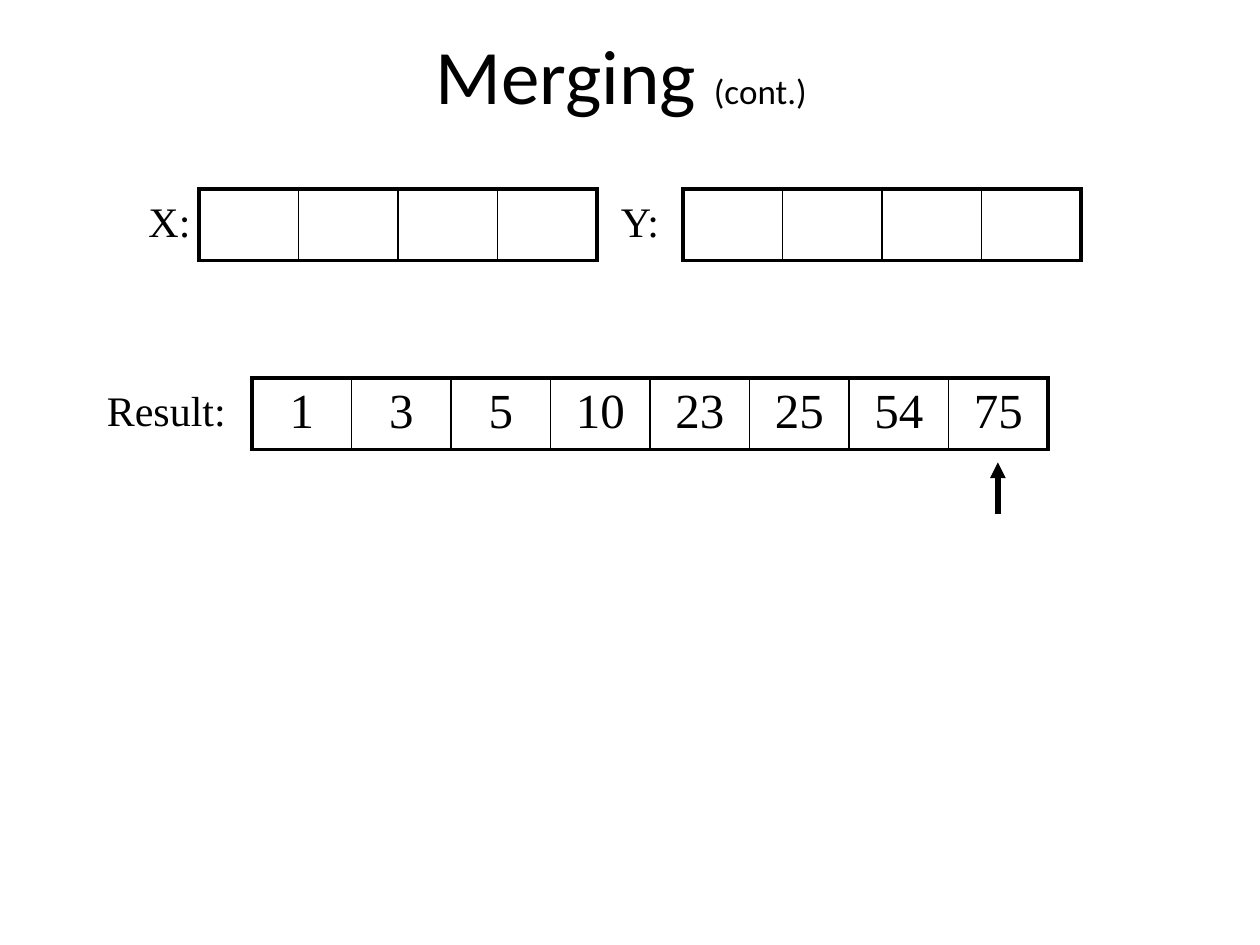
from dataclasses import dataclass

from lxml.etree import SubElement
from pptx import Presentation
from pptx.dml.color import RGBColor
from pptx.enum.shapes import MSO_CONNECTOR as Conn
from pptx.enum.text import MSO_ANCHOR as Anchor, PP_ALIGN as Align
from pptx.oxml.ns import qn
from pptx.util import Inches, Pt

BLACK = "000000"
SERIF = "Times New Roman"
CELL_W, CELL_H = 0.79, 0.57
THICK, THIN = 2.25, 1


@dataclass
class ArrayRow:
    label: str
    label_left: float
    label_width: float
    left: float
    top: float
    values: tuple[str, ...]


ARRAYS = [
    ArrayRow("X:", 1.08, 0.58, 1.58, 1.5, ("",) * 4),
    ArrayRow("Y:", 4.83, 0.58, 5.42, 1.5, ("",) * 4),
    ArrayRow("Result:", 0.75, 1.17, 2, 3,
             ("1", "3", "5", "10", "23", "25", "54", "75")),
]


def rgb(color: str) -> RGBColor:
    return RGBColor.from_string(color)


def add_run(p, text: str, size: float, font: str) -> None:
    r = p.add_run()
    r.text = text
    for name, value in {"size": Pt(size), "name": font}.items():
        setattr(r.font, name, value)
    r.font.color.rgb = rgb(BLACK)


def set_borders(cell, first: bool, last: bool) -> None:
    widths = {
        "a:lnL": THICK if first else THIN,
        "a:lnR": THICK if last else THIN,
        "a:lnT": THICK,
        "a:lnB": THICK,
    }
    tc_pr = cell._tc.get_or_add_tcPr()
    for tag, width in widths.items():
        ln = SubElement(tc_pr, qn(tag), w=str(Pt(width)))
        fill = SubElement(ln, qn("a:solidFill"))
        SubElement(fill, qn("a:srgbClr"), val=BLACK)


def add_array(s, row: ArrayRow) -> None:
    count = len(row.values)
    table = s.shapes.add_table(
        1, count, Inches(row.left), Inches(row.top),
        Inches(CELL_W * count), Inches(CELL_H)).table
    for name in ("first_row", "horz_banding"):
        setattr(table, name, False)
    for i, value in enumerate(row.values):
        table.columns[i].width = Inches(CELL_W)
        cell = table.cell(0, i)
        set_borders(cell, i == 0, i == count - 1)
        cell.fill.background()
        if value:
            p = cell.text_frame.paragraphs[0]
            p.alignment = Align.CENTER
            add_run(p, value, 28, SERIF)


def add_label(s, row: ArrayRow) -> None:
    box = s.shapes.add_textbox(Inches(row.label_left), Inches(row.top),
                               Inches(row.label_width), Inches(0.5))
    tf = box.text_frame
    tf.word_wrap = True
    p = tf.paragraphs[0]
    p.space_before = Pt(3)
    add_run(p, row.label, 24, SERIF)


def add_arrow(s, x: float, start: float, end: float) -> None:
    arrow = s.shapes.add_connector(Conn.STRAIGHT, Inches(x), Inches(start),
                                   Inches(x), Inches(end))
    arrow.line.color.rgb = rgb(BLACK)
    arrow.line.width = Pt(3)
    SubElement(arrow.line._get_or_add_ln(), qn("a:tailEnd"), type="triangle")
    SubElement(arrow._element.spPr, qn("a:effectLst"))


def add_title(s) -> None:
    sp = s.shapes.title
    frame = {"left": 0.75, "top": 0.17, "width": 8.5, "height": 0.83}
    for name, value in frame.items():
        setattr(sp, name, Inches(value))
    tf = sp.text_frame
    tf.vertical_anchor = Anchor.MIDDLE
    p = tf.paragraphs[0]
    p.alignment = Align.CENTER
    for text, size in (("Merging ", 44), ("(cont.)", 20), (" ", 44)):
        add_run(p, text, size, "Calibri")


def main() -> None:
    prs = Presentation()
    prs.slide_width, prs.slide_height = Inches(10), Inches(7.5)
    s = prs.slides.add_slide(prs.slide_layouts[5])
    add_title(s)
    for row in ARRAYS:
        add_array(s, row)
    add_arrow(s, 7.92, 4.08, 3.67)
    for row in ARRAYS:
        add_label(s, row)
    prs.save("out.pptx")


if __name__ == "__main__":
    main()
